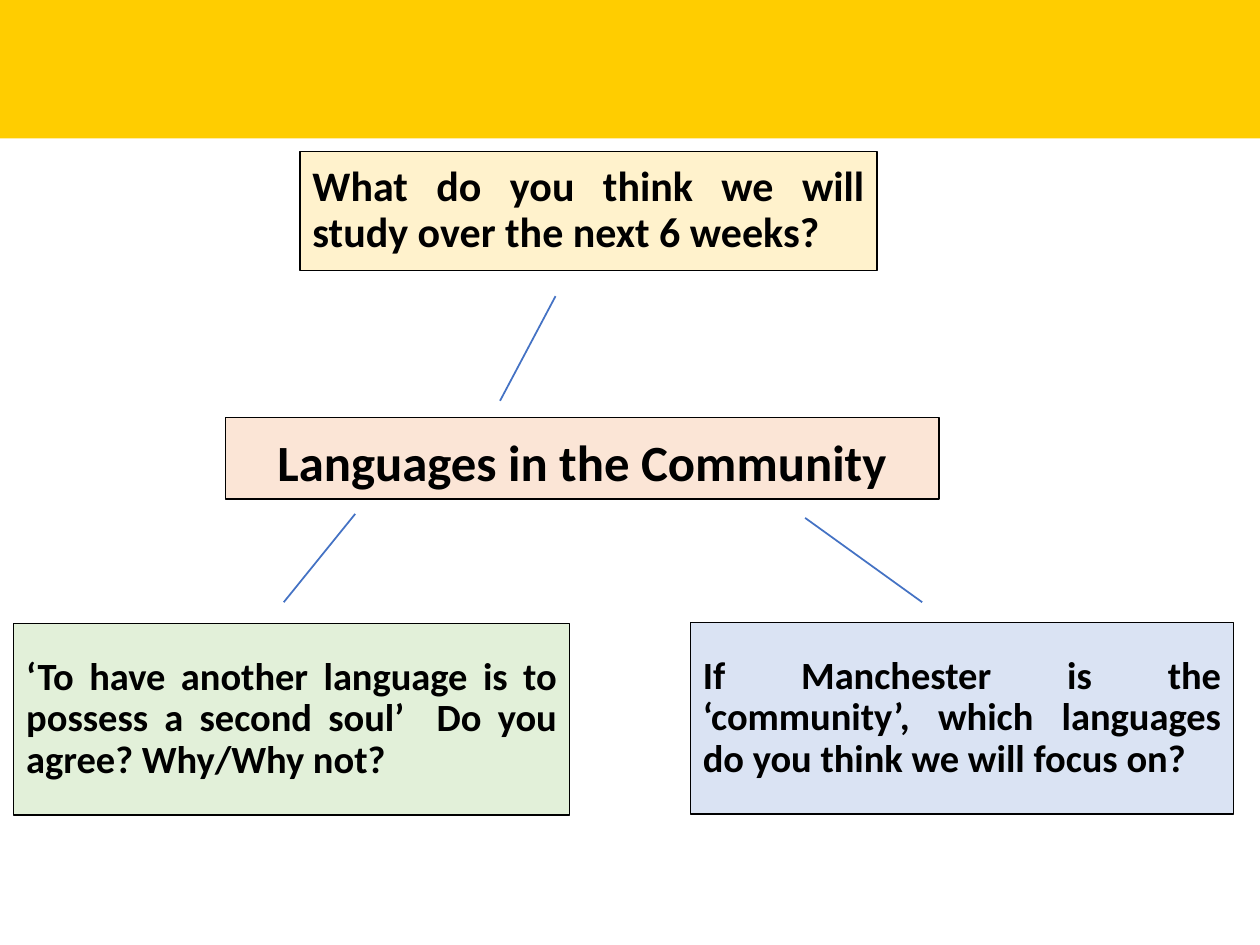
from lxml import etree
from pptx import Presentation
from pptx.dml.color import RGBColor
from pptx.enum.shapes import MSO_CONNECTOR, MSO_SHAPE
from pptx.enum.text import MSO_ANCHOR, MSO_AUTO_SIZE, PP_ALIGN
from pptx.oxml.ns import qn
from pptx.util import Cm, Pt

RECTANGLE = MSO_SHAPE.RECTANGLE
STRAIGHT = MSO_CONNECTOR.STRAIGHT
CENTER, JUSTIFY = PP_ALIGN.CENTER, PP_ALIGN.JUSTIFY
MIDDLE, BOTTOM = MSO_ANCHOR.MIDDLE, MSO_ANCHOR.BOTTOM
NO_AUTOFIT = MSO_AUTO_SIZE.NONE

BLACK = RGBColor(0x00, 0x00, 0x00)
GOLD = RGBColor(0xFF, 0xCD, 0x00)
PEACH = RGBColor(0xFB, 0xE5, 0xD6)
CREAM = RGBColor(0xFF, 0xF2, 0xCC)
PALE_BLUE = RGBColor(0xDA, 0xE3, 0xF3)
PALE_GREEN = RGBColor(0xE2, 0xF0, 0xD9)
LINK_BLUE = RGBColor(0x44, 0x72, 0xC4)


def write_text(box, text, size, font="Calibri", color=BLACK, align=JUSTIFY, anchor=MIDDLE):
    frame = box.text_frame
    frame.word_wrap = True
    frame.auto_size = NO_AUTOFIT
    frame.vertical_anchor = anchor
    para = frame.paragraphs[0]
    para.alignment = align
    para.line_spacing = 0.9
    para.space_before = Pt(0)
    span = para.add_run()
    span.text = text
    span.font.name = font
    span.font.size = Pt(size)
    span.font.bold = True
    span.font.color.rgb = color


class MindMap:
    """Holds the current slide and its shared outline style."""

    def __init__(self, page, outline=BLACK, outline_width=0.75):
        self.page = page
        self.outline = outline
        self.outline_width = Pt(outline_width)

    def paint(self, box, fill):
        box.fill.solid()
        box.fill.fore_color.rgb = fill
        box.line.color.rgb = self.outline
        box.line.width = self.outline_width

    def rectangle(self, left, top, width, height):
        box = self.page.shapes.add_shape(RECTANGLE, Cm(left), Cm(top), Cm(width), Cm(height))
        box.shadow.inherit = False
        return box

    def banner(self, width, height, fill):
        box = self.rectangle(0, 0, width, height)
        box.fill.solid()
        box.fill.fore_color.rgb = fill
        box.line.fill.background()

    def topic(self, text, left, top, width, height, fill):
        box = self.page.shapes.title
        box.left, box.top, box.width, box.height = Cm(left), Cm(top), Cm(width), Cm(height)
        self.paint(box, fill)
        write_text(box, text, 29, align=CENTER, anchor=BOTTOM)

    def question(self, text, left, top, width, height, fill, size=22):
        box = self.rectangle(left, top, width, height)
        self.paint(box, fill)
        write_text(box, text, size)

    def link(self, start, end):
        line = self.page.shapes.add_connector(STRAIGHT, *map(Cm, start + end))
        line.line.color.rgb = LINK_BLUE
        line.line.width = Pt(1)
        etree.SubElement(line._element.spPr, qn("a:effectLst"))


def main():
    deck = Presentation()
    deck.slide_width, deck.slide_height = Cm(25.4), Cm(19.05)
    mind_map = MindMap(deck.slides.add_slide(deck.slide_layouts[5]))

    # Header band and central topic
    mind_map.banner(25.4, 2.79, GOLD)
    mind_map.topic("Languages in the Community", 4.55, 8.41, 14.38, 1.65, PEACH)

    # Links from the topic to each question
    mind_map.link((10.08, 8.08), (11.2, 5.97))
    mind_map.link((16.23, 10.44), (18.59, 12.14))
    mind_map.link((7.16, 10.36), (5.72, 12.14))

    # Questions around the topic
    mind_map.question("What do you think we will study over the next 6 weeks?",
                      6.05, 3.05, 11.63, 2.41, CREAM, size=24)
    mind_map.question("If Manchester is the ‘community’, which languages do you think we will focus on?",
                      13.92, 12.55, 10.95, 3.86, PALE_BLUE)
    mind_map.question("‘To have another language is to possess a second soul’  Do you agree? Why/Why not?",
                      0.28, 12.57, 11.2, 3.86, PALE_GREEN)

    deck.save("out.pptx")


if __name__ == "__main__":
    main()
